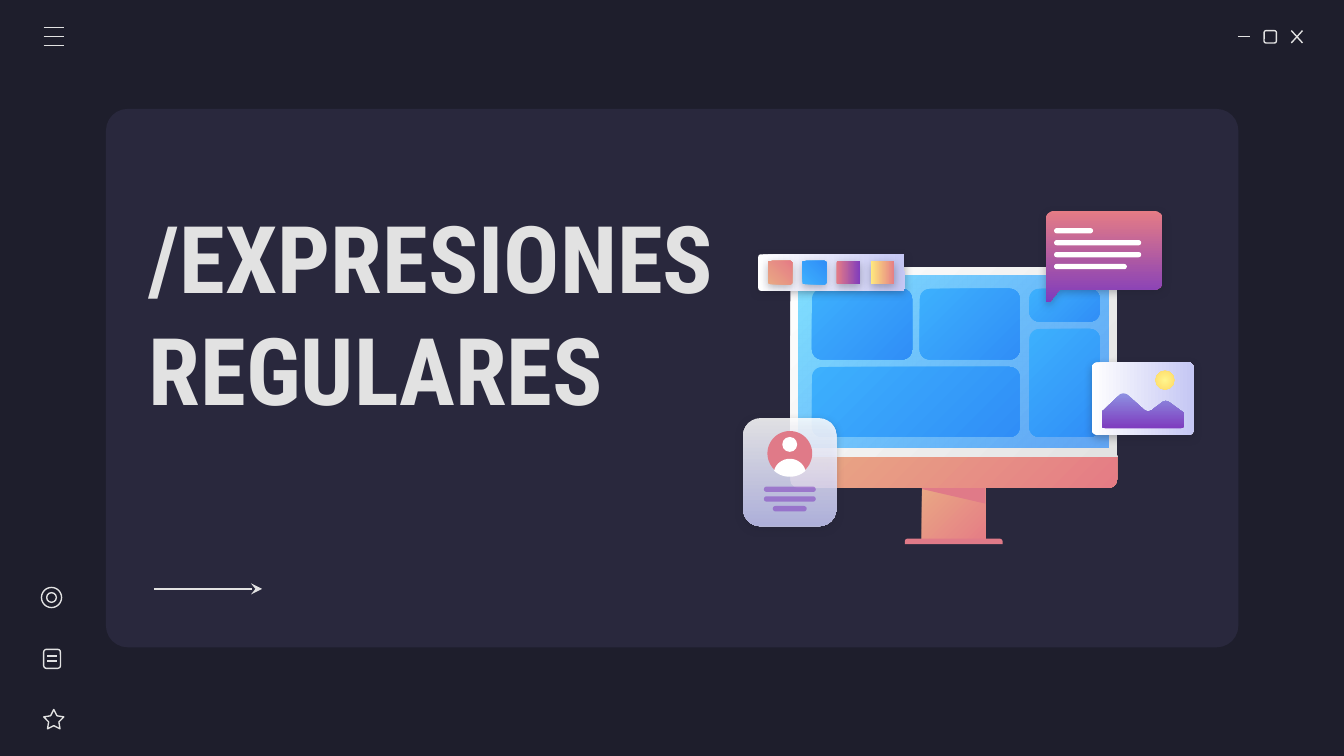
from lxml import etree
from pptx import Presentation
from pptx import util as u
from pptx.dml import color
from pptx.enum import shapes as kinds, text
from pptx.oxml.ns import qn

INK, WHITE, ROSE, PURPLE = "E2E2E2", "FFFFFF", "E07A88", "7E3BBE"
CORAL, BLUE, PALE = ("E9A984", "E57C85", 45), ("3DB0FD", "308EF7", 45), (WHITE, "C5C7F4", 90)
SUNSET = ("E57C85", PURPLE, 90)
RECT, ROUND, OVAL = (kinds.MSO_SHAPE.RECTANGLE, kinds.MSO_SHAPE.ROUNDED_RECTANGLE, kinds.MSO_SHAPE.OVAL)
TOP_ROUND = kinds.MSO_SHAPE.ROUND_2_SAME_RECTANGLE


def rgb(value):
    """Return the colour for a hex string."""
    return color.RGBColor.from_string(value)


def apply_format(target, values):
    """Set each named value on the target."""
    for name, value in values.items():
        setattr(target, name, value)


def style(shape, fill=None, line=None, alphas=(), shadow=False):
    """Give a shape its fill, outline, opacities in percent and shadow."""
    shape.shadow.inherit = False
    if isinstance(fill, tuple):
        shape.fill.gradient()
        shape.fill.gradient_angle = (360 - fill[2]) % 360
        for stop, value in zip(shape.fill.gradient_stops, fill):
            stop.color.rgb = rgb(value)
    elif fill:
        shape.fill.solid()
        shape.fill.fore_color.rgb = rgb(fill)
    else:
        shape.fill.background()
    properties = shape._element.spPr
    for node, alpha in zip(list(properties.iter(qn("a:srgbClr"))), alphas):
        etree.SubElement(node, qn("a:alpha"), val=str(alpha * 1000))
    if line:
        shape.line.color.rgb = rgb(line)
        shape.line.width = u.Pt(0.75)
    else:
        shape.line.fill.background()
    if shadow:
        outer = etree.SubElement(properties.find(qn("a:effectLst")), qn("a:outerShdw"),
                                 blurRad=str(u.Pt(4.5)), dist=str(u.Pt(1.5)), dir="5400000",
                                 algn="bl", rotWithShape="0")
        node = etree.SubElement(outer, qn("a:srgbClr"), val="1E1E2C")
        etree.SubElement(node, qn("a:alpha"), val="30000")
    return shape


def add_part(shapes, kind, box, fill=None, adjust=(), turned=False, **look):
    """Add a preset shape, optionally turned by 270 degrees within its box."""
    left, top, width, height = box
    if turned:
        left, top = left + (width - height) / 2, top + (height - width) / 2
        width, height = height, width
    shape = shapes.add_shape(kind, *map(u.Pt, (left, top, width, height)))
    for index, value in enumerate(adjust):
        shape.adjustments[index] = value
    if turned:
        shape.rotation = 270
    return style(shape, fill, **look)


def add_line(shapes, x1, y1, x2, y2):
    """Add a thin light line."""
    line = shapes.add_connector(kinds.MSO_CONNECTOR.STRAIGHT, *map(u.Pt, (x1, y1, x2, y2)))
    line.line.color.rgb = rgb(INK)
    line.line.width = u.Pt(0.75)
    etree.SubElement(line._element.spPr, qn("a:effectLst"))
    return line


def add_outline(shapes, left, top, steps, fill, **look):
    """Add a closed outline from points and cubic curves."""
    points = [steps[0]]
    for step in steps[1:]:
        if len(step) == 2:
            points.append(step)
            continue
        x0, y0 = points[-1]
        x1, y1, x2, y2, x3, y3 = step
        for t in (i / 8 for i in range(1, 9)):
            a, b, c, d = (1 - t) ** 3, 3 * t * (1 - t) ** 2, 3 * t * t * (1 - t), t ** 3
            points.append((a * x0 + b * x1 + c * x2 + d * x3, a * y0 + b * y1 + c * y2 + d * y3))
    points = [(u.Pt(left + x), u.Pt(top + y)) for x, y in points]
    builder = shapes.build_freeform(*points[0], scale=1.0)
    builder.add_line_segments(points[1:], close=True)
    return style(builder.convert_to_shape(), fill, **look)


def add_window_controls(shapes, left, top, width, height):
    """Draw the minimise, maximise and close signs."""
    add_line(shapes, left, top + height / 2, left + height, top + height / 2)
    add_part(shapes, ROUND, (left + (width - height) / 2, top, height, height), line=INK)
    right = left + width
    add_line(shapes, right - 6, top, right, top + height)
    add_line(shapes, right, top, right - 6, top + height)


def add_title(shapes, left, top, width, height):
    """Write the title in two lines."""
    frame = shapes.add_textbox(*map(u.Pt, (left, top, width, height))).text_frame
    apply_format(frame, {"word_wrap": True, "vertical_anchor": text.MSO_ANCHOR.MIDDLE})
    apply_format(frame, {f"margin_{side}": u.Pt(7.2) for side in ("left", "right", "top", "bottom")})
    frame.text = "/EXPRESIONES\vREGULARES"
    for run in frame.paragraphs[0].runs:
        apply_format(run.font, {"name": "Roboto Condensed", "size": u.Pt(50), "bold": True})
        run.font.color.rgb = rgb(INK)


def add_monitor(shapes, left, top, width, height):
    """Draw the desktop screen with its stand and tiles."""
    neck = (width - 34) / 2
    add_part(shapes, RECT, (left + neck, top + 116.6, 34, 31), CORAL)
    add_part(shapes, TOP_ROUND, (left + (width - 52.4) / 2, top + height - 3, 52.4, 3), ROSE, (0.5, 0))
    add_outline(shapes, left + neck, top + 116.6, [(0, 0), (0, 2.2), (34, 10), (34, 0)], ROSE)
    add_part(shapes, TOP_ROUND, (left, top + 101, width, 17.2), CORAL, (0, 0.26))
    add_part(shapes, TOP_ROUND, (left, top, width, 101.5), (WHITE, INK, 45), (0.045, 0))
    add_part(shapes, RECT, (left + 4.6, top + 4.5, width - 9.2, 92.2),
             ("80DFFF", "318FFA", 45), alphas=(100, 72))
    for x, y, w, h in ((11.6, 11.5, 53.6, 37.9), (11.6, 53.4, 111.3, 37.5), (69.3, 11.5, 53.6, 37.9),
                       (128, 11.5, 37.8, 17.6), (128, 33, 37.8, 57.9)):
        add_part(shapes, ROUND, (left + x, top + y, w, h), BLUE, (5.4 / min(w, h),))


def add_speech_bubble(shapes, left, top, width, height):
    """Draw the speech bubble with its text bars."""
    right, bottom, r, k = width, height - 6.9, 4.6, 2
    add_outline(shapes, left, top, [
        (r, 0), (k, 0, 0, k, 0, r), (0, height - 1), (0, height, 1.6, height + 0.4, 2.4, height - 0.6),
        (7.4, bottom), (right - r, bottom), (right - k, bottom, right, bottom - k, right, bottom - r),
        (right, r), (right, k, right - k, 0, right - r, 0)], SUNSET, shadow=True)
    for row, bar in enumerate((20.9, 46.7, 46.7, 39)):
        add_part(shapes, ROUND, (left + 4.4, top + 9.2 + 6.4 * row, bar, 2.8), WHITE, (0.5,))


def add_menu(shapes, left, top, width, height):
    """Draw the three menu lines."""
    for row in range(3):
        y = top + row * height / 2
        add_line(shapes, left, y, left + width, y)


def add_profile_card(shapes, left, top, width, height):
    """Draw the card with a person sign and three bars."""
    add_part(shapes, ROUND, (left, top, width, height), PALE, (0.187,), alphas=(86, 86), shadow=True)
    middle = left + width / 2
    for y, size, fill in ((6.9, 24, ROSE), (10.1, 8, WHITE)):
        add_part(shapes, OVAL, (middle - size / 2, top + y, size, size), fill)
    add_outline(shapes, middle, top + 21.8, [
        (0, 0), (-4, 0, -7.6, 2.7, -8.4, 6.4), (-6, 8.6, -3.2, 9.6, 0, 9.6),
        (3.2, 9.6, 6, 8.6, 8.4, 6.4), (7.6, 2.7, 4, 0, 0, 0)], WHITE)
    for row, bar in enumerate((27.8, 27.8, 18.2)):
        add_part(shapes, ROUND, (middle - bar / 2, top + 36.7 + 5.2 * row, bar, 2.9), PURPLE, (0.5,), alphas=(54,))


def add_photo(shapes, left, top, width, height):
    """Draw the photo sign with hills and sun."""
    add_part(shapes, ROUND, (left, top, width, height), PALE, (0.073,), True, shadow=True)
    add_outline(shapes, left + 5.6, top + 16.7, [
        (11.5, 0), (10.8, 0, 10.1, 0.1, 9.4, 0.7), (0.7, 9.1), (0, 9.6, 0, 10.1, 0, 10.8), (0, 16.6),
        (0, 18, 0.7, 18.7, 2.2, 18.7), (41.6, 18.7), (43, 18.7, 43.9, 18, 43.9, 16.6), (43.9, 11.5),
        (43.9, 10.8, 43.6, 10.3, 43.2, 10), (36, 4.7), (34.6, 3.8, 33.4, 3.8, 32.2, 4.7), (26.6, 9),
        (25.2, 9.8, 23.7, 9.8, 22.4, 8.7), (13.7, 0.8), (13, 0.2, 12.2, 0, 11.5, 0)],
        ("8D90E1", PURPLE, 90))
    sun = add_part(shapes, OVAL, (left + 34.2, top + 4.5, 10.2, 10.2), ("FFF68E", "FFD966", 0))
    gradient = sun._element.spPr.find(qn("a:gradFill"))
    gradient.remove(gradient.find(qn("a:lin")))
    radial = etree.SubElement(gradient, qn("a:path"), path="circle")
    etree.SubElement(radial, qn("a:fillToRect"), l="50000", t="50000", r="50000", b="50000")


def add_palette(shapes, left, top, width, height):
    """Draw the bar with four colour swatches."""
    add_part(shapes, ROUND, (left, top, width, height), PALE, (0.073,), True, shadow=True)
    for column, fill in enumerate((CORAL, BLUE, SUNSET, ("FFEA7D", "E57C85", 90))):
        add_part(shapes, ROUND, (left + 5.3 + 18.3 * column, top + 3.6, 12.9, 12.5), fill, (0.073,), True, shadow=True)


def add_sidebar(shapes, left, top, width, height):
    """Draw the star, note and target signs."""
    add_part(shapes, kinds.MSO_SHAPE.STAR_5_POINT, (left + 1.2, top + height - 10.4, 10.8, 10.4),
             adjust=(0.254,), line=INK)
    add_part(shapes, ROUND, (left + 1.2, top + 33.2, 9, 10.2), line=INK)
    for y in (36.8, 39.4):
        add_line(shapes, left + 3.1, top + y, left + 8.3, top + y)
    for inset in (0, 2.8):
        size = 10.8 - 2 * inset
        add_part(shapes, OVAL, (left + inset, top + inset, size, size), line=INK)


def add_arrow(shapes, left, top, width, height):
    """Draw the arrow under the title."""
    arrow = add_line(shapes, left, top, left + width, top + height)
    etree.SubElement(arrow.line._get_or_add_ln(), qn("a:tailEnd"), type="stealth")


def main():
    """Build the title slide and save it."""
    presentation = Presentation()
    apply_format(presentation, {"slide_width": u.Pt(720), "slide_height": u.Pt(405)})
    slide = presentation.slides.add_slide(presentation.slide_layouts[6])
    slide.background.fill.solid()
    slide.background.fill.fore_color.rgb = rgb("1E1E2C")
    shapes = slide.shapes
    add_part(shapes, ROUND, (56.8, 58.4, 606.6, 288.4), "29283D", (0.04,))
    add_window_controls(shapes.add_group_shape().shapes, 663.2, 16.4, 34.6, 6.6)
    add_title(shapes, 72.7, 103.7, 321.8, 126.7)
    for draw, box in ((add_monitor, (423.4, 143.2, 175, 148.4)),
                      (add_speech_bubble, (560.3, 113, 62.6, 49.1)),
                      (add_menu, (23.4, 14.7, 10.7, 9.6)),
                      (add_profile_card, (398.1, 224, 50, 57.9)),
                      (add_photo, (584.8, 194.1, 54.7, 38.9)),
                      (add_palette, (406.2, 136.2, 78.5, 19.6)),
                      (add_sidebar, (22.2, 314.7, 12, 75.8))):
        draw(shapes.add_group_shape().shapes, *box)
    add_arrow(shapes, 82.4, 315.5, 58, 0)
    presentation.save("out.pptx")


if __name__ == "__main__":
    main()
